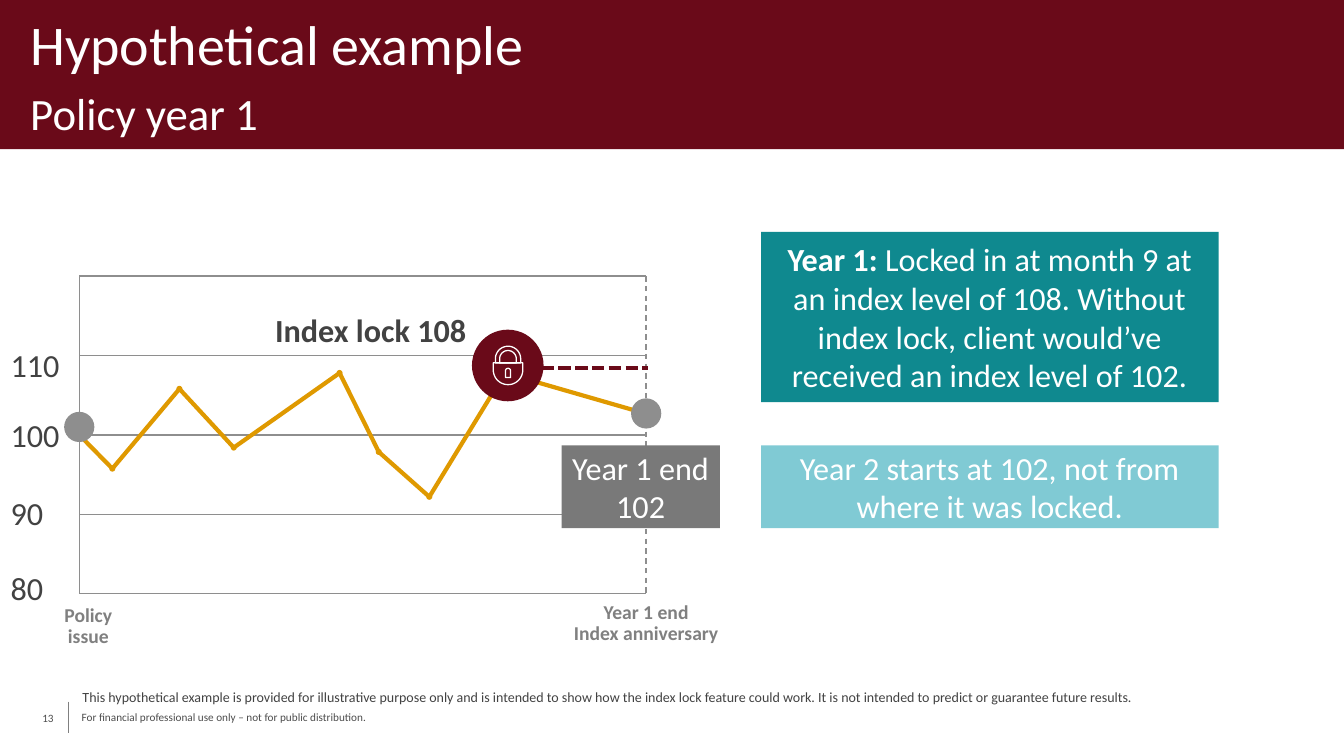
from dataclasses import dataclass
from itertools import pairwise
from math import cos, pi, sin

from lxml import etree
from pptx import Presentation
from pptx.dml.color import RGBColor
from pptx.enum.dml import MSO_LINE
from pptx.enum.shapes import MSO_CONNECTOR, MSO_SHAPE
from pptx.enum.text import MSO_ANCHOR, MSO_AUTO_SIZE, PP_ALIGN
from pptx.util import Inches, Pt

LEFT, MID = PP_ALIGN.LEFT, PP_ALIGN.CENTER
TOP, CENTER = MSO_ANCHOR.TOP, MSO_ANCHOR.MIDDLE
RECT, OVAL = MSO_SHAPE.RECTANGLE, MSO_SHAPE.OVAL
DASH, DOTS = MSO_LINE.DASH, MSO_LINE.SQUARE_DOT
WIDE, HIGH = Inches(13.333), Inches(7.5)
DRAW = "{http://schemas.openxmlformats.org/drawingml/2006/main}"


@dataclass(frozen=True)
class Theme:
    font: str = "Calibri"
    wine: str = "6A0A19"
    white: str = "FFFFFF"
    ink: str = "424242"
    foot: str = "4D4D4D"
    rule: str = "808080"
    grid: str = "8E8E8E"
    gold: str = "DF9900"
    teal: str = "0F898F"
    aqua: str = "80CAD4"
    slate: str = "797979"
    head: int = 40
    sub: int = 32
    body: int = 23
    axis: int = 14
    note: int = 10
    tiny: int = 8


T = Theme()


@dataclass(frozen=True)
class Box:
    """Place in hundredths of the slide's width and height."""
    x: float
    y: float
    w: float
    h: float


@dataclass(frozen=True)
class Label:
    box: Box
    lines: tuple[str, ...]
    size: int = T.body
    tint: str = T.ink
    bold: bool = False
    align: PP_ALIGN = LEFT
    wrap: bool = False
    space: float = 0.9
    anchor: MSO_ANCHOR = TOP
    inset: tuple[float, float] = (0.1, 0.05)


@dataclass(frozen=True)
class Panel:
    box: Box
    fill: str
    lines: tuple[str, ...]
    lead: str = ""


def col(n: float) -> int:
    return round(WIDE * n / 100)


def row(n: float) -> int:
    return round(HIGH * n / 100)


def place(box: Box) -> tuple[int, int, int, int]:
    return col(box.x), row(box.y), col(box.w), row(box.h)


def rgb(tint: str) -> RGBColor:
    return RGBColor.from_string(tint)


def style(para, size: int, tint: str, align: PP_ALIGN = LEFT) -> None:
    para.alignment = align
    font = para.font
    font.name, font.size = T.font, Pt(size)
    font.color.rgb = rgb(tint)


def paint(shape, fill: str) -> None:
    shape.shadow.inherit = False
    shape.fill.solid()
    shape.fill.fore_color.rgb = rgb(fill)
    shape.line.fill.background()


def write(item: Label) -> None:
    frame = slide.shapes.add_textbox(*place(item.box)).text_frame
    frame.word_wrap, frame.vertical_anchor = item.wrap, item.anchor
    frame.margin_left = frame.margin_right = Inches(item.inset[0])
    frame.margin_top = frame.margin_bottom = Inches(item.inset[1])
    frame.text = "\n".join(item.lines)
    for para in frame.paragraphs:
        style(para, item.size, item.tint, item.align)
        para.font.bold, para.line_spacing = item.bold, item.space


def panel(item: Panel) -> None:
    shape = slide.shapes.add_shape(RECT, *place(item.box))
    paint(shape, item.fill)
    frame = shape.text_frame
    frame.word_wrap, frame.vertical_anchor = True, CENTER
    first = frame.paragraphs[0]
    if item.lead:
        run = first.add_run()
        run.text, run.font.bold = item.lead, True
    first.add_run().text = item.lines[0]
    for text in item.lines[1:]:
        frame.add_paragraph().text = text
    for para in frame.paragraphs:
        style(para, T.body, T.white, MID)


def line(x1: float, y1: float, x2: float, y2: float, tint: str,
         width: float = 1, dash: MSO_LINE | None = None) -> None:
    link = slide.shapes.add_connector(
        MSO_CONNECTOR.STRAIGHT, col(x1), row(y1), col(x2), row(y2))
    link.line.color.rgb, link.line.width = rgb(tint), Pt(width)
    if dash:
        link.line.dash_style = dash
    etree.SubElement(link._element.spPr, DRAW + "effectLst")


def disc(x: float, y: float, size: float, fill: str) -> None:
    wide = col(size)
    shape = slide.shapes.add_shape(
        OVAL, col(x) - wide // 2, row(y) - wide // 2, wide, wide)
    paint(shape, fill)


def arch(x: float, y: float, rad: float, foot: float, way: int = 1) -> None:
    """Outline a half circle closed by a straight foot, in slide shares."""
    mid, base, size = col(x), row(y), col(rad)
    arc = [(mid - size * cos(pi * i / 24), base - way * size * sin(pi * i / 24))
           for i in range(25)]
    pen = slide.shapes.build_freeform(mid - size, row(foot))
    pen.add_line_segments([*arc, (mid + size, row(foot))], close=True)
    shape = pen.convert_to_shape()
    shape.shadow.inherit = False
    shape.fill.background()
    shape.line.color.rgb, shape.line.width = rgb(T.white), Pt(0.9)


# Chart scale: months 0 to 12 across, index levels 80 to 120 upward
START, END, FLOOR, ROOF = 5.9, 48.08, 78.53, 36.53


def month(n: float) -> float:
    return START + (END - START) * n / 12


def level(n: float) -> float:
    return FLOOR - (FLOOR - ROOF) * (n - 80) / 40


PATH = [(0, 100), (0.7, 95.75), (2.12, 105.8), (3.27, 98.4), (5.51, 107.8),
        (6.34, 97.85), (7.41, 92.2), (9.01, 107.8), (12.04, 102.6)]
TICKS = {80: 75.07, 90: 65.2, 100: 54.8, 110: 45.6}
LABELS = [
    *(Label(Box(0.05, y, 7.5, 6), (str(n),)) for n, y in TICKS.items()),
    Label(Box(19.73, 40.93, 15.9, 6), ("Index lock 108",), bold=True),
    Label(Box(3.8, 79.47, 5.55, 4.67), ("Policy", "issue"),
          T.axis, T.rule, True, MID),
    Label(Box(40.08, 79.07, 16, 5.5), ("Year 1 end", "Index anniversary"),
          T.axis, T.rule, True, MID),
    Label(Box(5.4, 90.67, 89.1, 7.2), (
        "This hypothetical example is provided for illustrative purpose only "
        "and is intended to show how the index lock feature could work. It is "
        "not intended to predict or guarantee future results.",),
        T.note, wrap=True),
    Label(Box(6.08, 93.2, 89.33, 3.47), (
        "For financial professional use only – not for public distribution.",),
        T.tiny, T.foot, wrap=True, space=1, inset=(0, 0.06)),
    Label(Box(3.15, 92.27, 3, 5.33), ("13",), T.tiny, T.foot, wrap=True,
          space=1, anchor=CENTER, inset=(0, 0.06)),
]
PANELS = [
    Panel(Box(56.63, 30.67, 34.05, 22.53), T.teal, (
        "Locked in at month 9 at an index level of 108. Without index lock, "
        "client would’ve received an index level of 102.",), "Year 1: "),
    Panel(Box(56.63, 58.93, 34.05, 10.93), T.aqua,
          ("Year 2 starts at 102, not from where it was locked.",)),
    Panel(Box(41.78, 58.93, 11.78, 10.93), T.slate, ("Year 1 end", "102")),
]

deck = Presentation()
deck.slide_width, deck.slide_height = WIDE, HIGH
slide = deck.slides.add_slide(deck.slide_layouts[5])

# Title band
title = slide.shapes.title
title.left, title.top, title.width, title.height = place(Box(0, 0, 100, 19.73))
paint(title, T.wine)
frame = title.text_frame
frame.text = "Hypothetical example\nPolicy year 1"
frame.auto_size, frame.vertical_anchor = MSO_AUTO_SIZE.NONE, CENTER
frame.margin_left = frame.margin_right = Inches(0.3)
frame.margin_top = frame.margin_bottom = Inches(0.3)
for para, size in zip(frame.paragraphs, (T.head, T.sub)):
    style(para, size, T.white)
frame.paragraphs[1].space_before = Pt(6)

# Chart grid and footer rule
line(START, ROOF, START, FLOOR, T.grid)
for n in range(80, 121, 10):
    line(START, level(n), END, level(n), T.grid)
line(END, ROOF, END, FLOOR, T.grid, dash=DASH)
line(5.1, 92.8, 5.1, 96.93, T.rule, 0.75)

# Index path
line(month(9.07), level(108.4), month(12.04), level(108.4), T.wine, 3, DOTS)
for (m1, n1), (m2, n2) in pairwise(PATH):
    line(month(m1), level(n1), month(m2), level(n2), T.gold, 3)
for m, n in PATH[1:-1]:
    disc(month(m), level(n), 0.45, T.gold)
for m, n in ((0, 101), (12, 102.7)):
    disc(month(m), level(n), 2.25, T.grid)

# Words and panels
for item in LABELS:
    write(item)
for item in PANELS:
    panel(item)

# Padlock: shackle, body, keyhole
disc(month(9.07), level(108.75), 5.33, T.wine)
for rad in (0.94, 0.62):
    arch(37.8, 47.47, rad, 48)
arch(37.8, 48.93, 1.1, 48, -1)
arch(37.8, 49.07, 0.19, 49.95)

deck.save("out.pptx")
